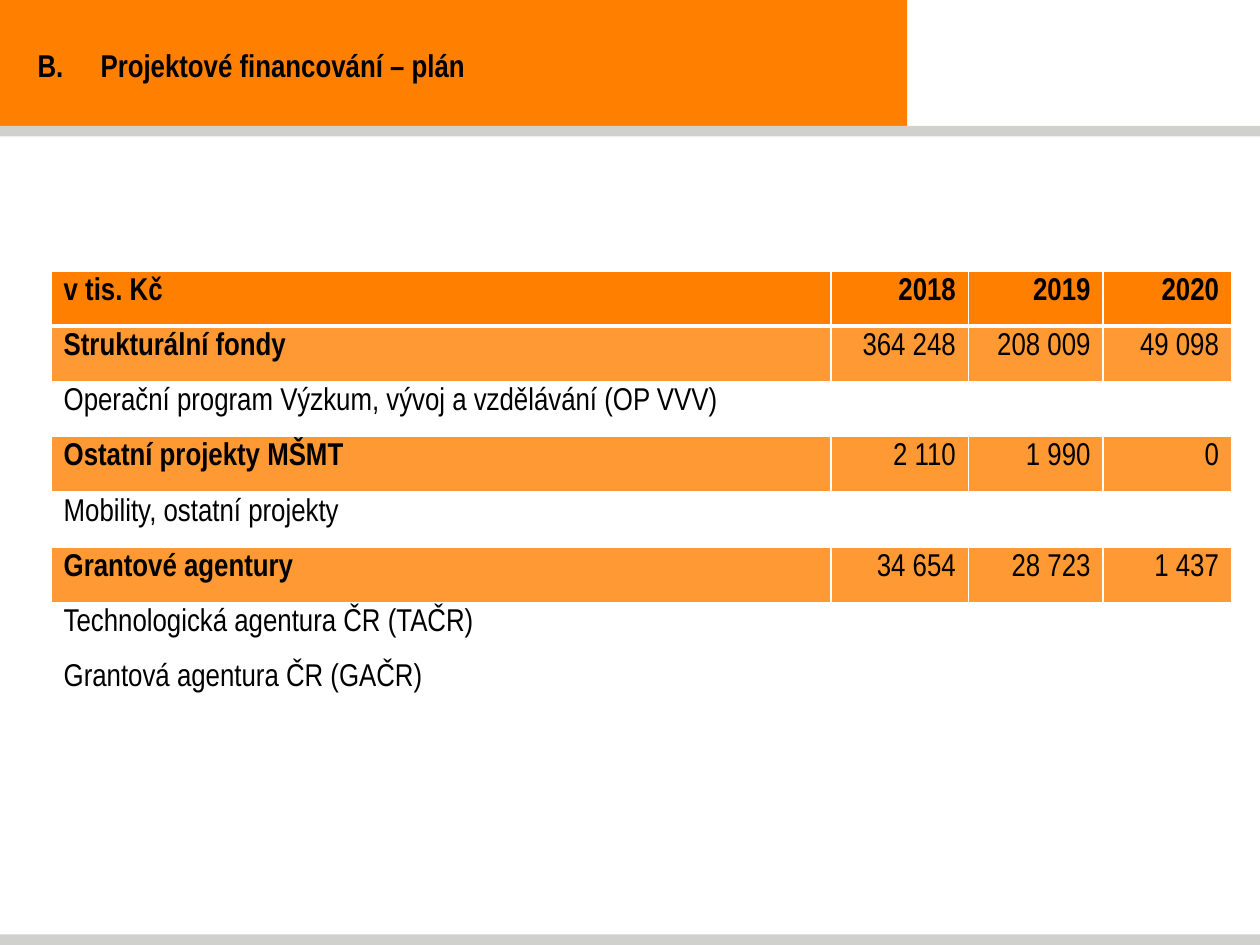
from dataclasses import dataclass

import pptx
import pptx.dml.color
import pptx.enum.shapes
import pptx.enum.text
import pptx.oxml
import pptx.oxml.ns
import pptx.util

Pt = pptx.util.Pt
ALIGN = pptx.enum.text.PP_ALIGN


@dataclass(frozen=True)
class Theme:
    header: str = "FF8001"
    group: str = "FF9933"
    paper: str = "FFFFFF"
    rule: str = "D0D0CE"
    ink: str = "000000"
    font: str = "Arial Narrow"
    size: float = 18


THEME = Theme()
COLUMN_WIDTHS = (445.7, 78.5, 77, 73.4)
ROW_HEIGHT = 31.6
FUNDING = (
    ("v tis. Kč", "2018", "2019", "2020"),
    ("Strukturální fondy", "364 248", "208 009", "49 098"),
    ("Operační program Výzkum, vývoj a vzdělávání (OP VVV)",),
    ("Ostatní projekty MŠMT", "2 110", "1 990", "0"),
    ("Mobility, ostatní projekty",),
    ("Grantové agentury", "34 654", "28 723", "1 437"),
    ("Technologická agentura ČR (TAČR)",),
    ("Grantová agentura ČR (GAČR)",),
)


def rgb(color):
    return pptx.dml.color.RGBColor.from_string(color)


def style_font(font, bold):
    font.name = THEME.font
    font.size = Pt(THEME.size)
    font.bold = bold
    font.color.rgb = rgb(THEME.ink)


def add_bar(slide, left, top, width, height, color):
    bar = slide.shapes.add_shape(
        pptx.enum.shapes.MSO_SHAPE.RECTANGLE, Pt(left), Pt(top), Pt(width), Pt(height))
    bar.shadow.inherit = False
    bar.fill.solid()
    bar.fill.fore_color.rgb = rgb(color)
    bar.line.fill.background()


def add_title(slide, text):
    title = slide.shapes.add_textbox(Pt(0), Pt(22.3), Pt(518.4), Pt(29.5))
    frame = title.text_frame
    frame.word_wrap = True
    frame.vertical_anchor = pptx.enum.text.MSO_ANCHOR.MIDDLE
    frame.text = text
    paragraph = frame.paragraphs[0]
    paragraph.alignment = ALIGN.JUSTIFY
    properties = paragraph._p.get_or_add_pPr()
    properties.set("marL", str(Pt(14.4)))
    properties.set("indent", "0")
    properties.append(pptx.oxml.parse_xml(
        f'<a:tabLst {pptx.oxml.ns.nsdecls("a")}>'
        f'<a:tab pos="{Pt(71.6)}" algn="l"/></a:tabLst>'))
    for run in paragraph.runs:
        style_font(run.font, True)


def set_borders(cell, top, bottom):
    """Draw the four cell edges; must run before the fill is set."""
    properties = cell._tc.get_or_add_tcPr()
    for side, width in (("L", 1), ("R", 1), ("T", top), ("B", bottom)):
        properties.append(pptx.oxml.parse_xml(
            f'<a:ln{side} {pptx.oxml.ns.nsdecls("a")} w="{Pt(width)}"><a:solidFill>'
            f'<a:srgbClr val="{THEME.paper}"/></a:solidFill></a:ln{side}>'))


def fill_cell(cell, text, color, bold, align):
    cell.margin_top = cell.margin_bottom = Pt(3.6)
    cell.fill.solid()
    cell.fill.fore_color.rgb = rgb(color)
    cell.text_frame.text = text
    paragraph = cell.text_frame.paragraphs[0]
    paragraph.alignment = align
    style_font(paragraph.font, bold)
    for run in paragraph.runs:
        style_font(run.font, bold)


def add_funding_table(slide):
    table = slide.shapes.add_table(
        len(FUNDING), len(COLUMN_WIDTHS), Pt(29.2), Pt(154.8),
        Pt(sum(COLUMN_WIDTHS)), Pt(ROW_HEIGHT * len(FUNDING))).table
    for column, width in zip(table.columns, COLUMN_WIDTHS):
        column.width = Pt(width)
    for r, entries in enumerate(FUNDING):
        table.rows[r].height = Pt(ROW_HEIGHT)
        is_header = r == 0
        has_amounts = len(entries) > 1
        color = THEME.header if is_header else THEME.group if has_amounts else THEME.paper
        for c in range(len(COLUMN_WIDTHS)):
            cell = table.cell(r, c)
            set_borders(cell, top=3 if r == 1 else 1, bottom=3 if is_header else 1)
            fill_cell(
                cell, entries[c] if c < len(entries) else "", color,
                bold=is_header or (has_amounts and c == 0),
                align=ALIGN.RIGHT if c else ALIGN.LEFT)


def main():
    deck = pptx.Presentation()
    deck.slide_width, deck.slide_height = Pt(720), Pt(540)
    slide = deck.slides.add_slide(deck.slide_layouts[6])
    add_bar(slide, 0, 0, 518.4, 72, THEME.header)
    for top in (534, 72):
        add_bar(slide, 0, top, 720, 6, THEME.rule)
    add_funding_table(slide)
    add_title(slide, "B.\tProjektové financování – plán")
    deck.save("out.pptx")


if __name__ == "__main__":
    main()
